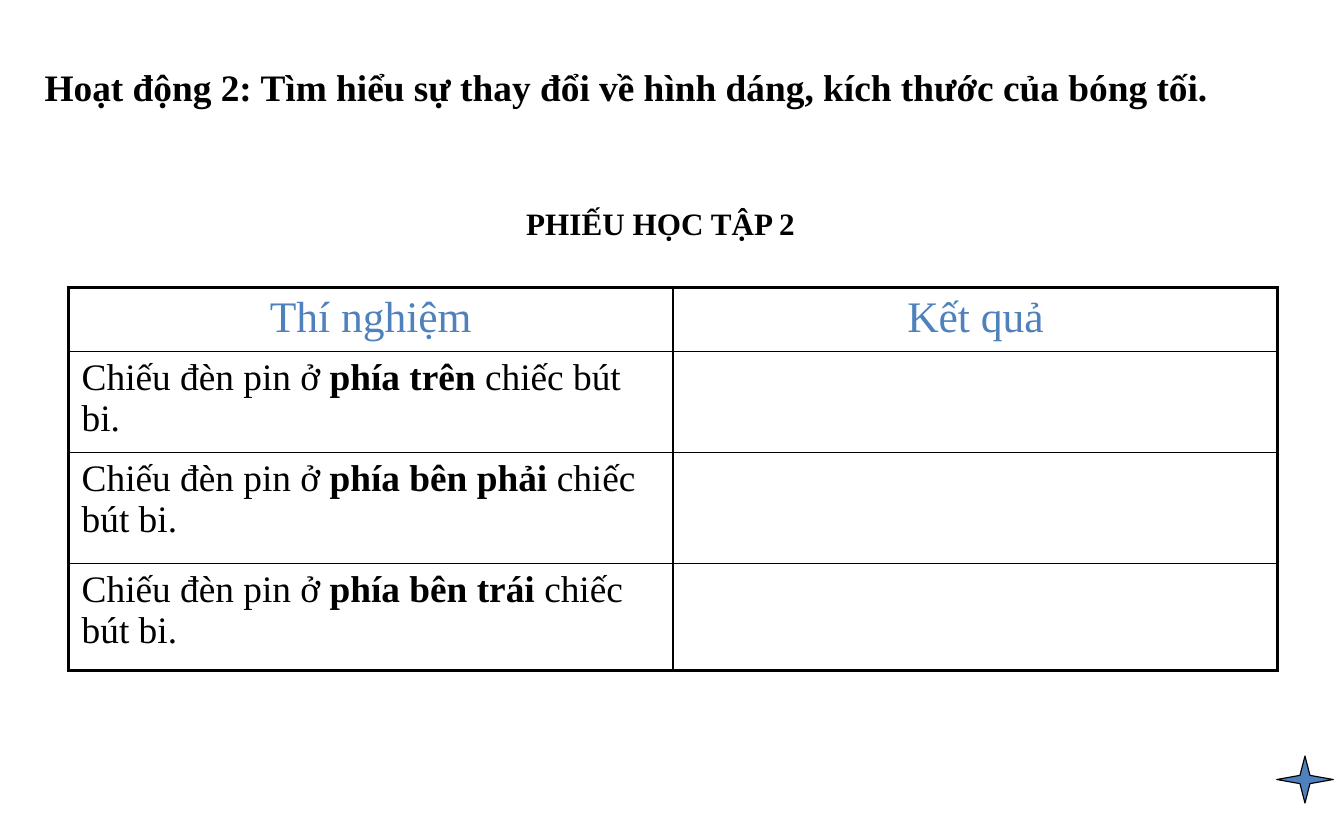
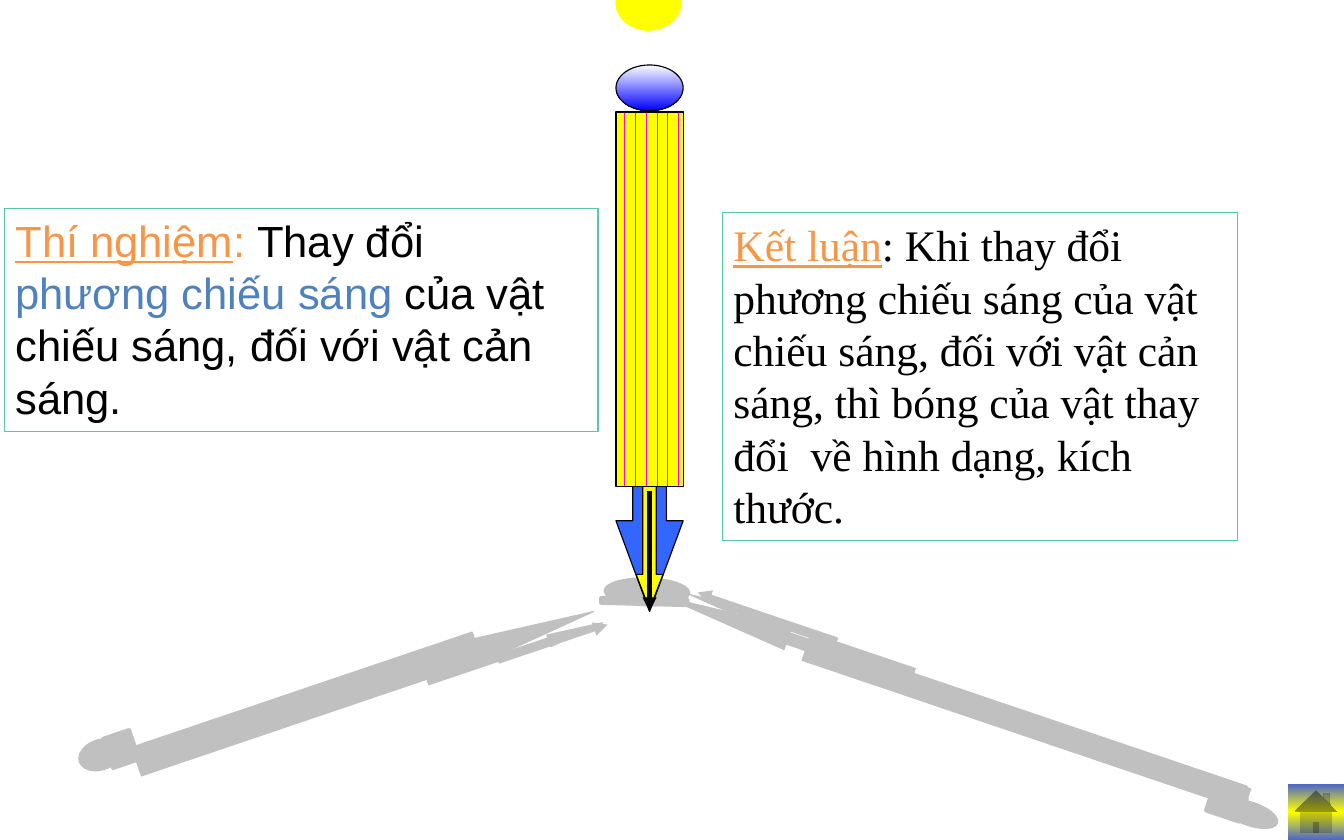
from copy import deepcopy
from dataclasses import dataclass
from math import cos, radians, sin

from lxml.etree import SubElement
from pptx import Presentation
from pptx.dml.color import RGBColor
from pptx.enum.dml import MSO_PATTERN
from pptx.enum.shapes import MSO_CONNECTOR, MSO_SHAPE
from pptx.enum.text import MSO_AUTO_SIZE, PP_ALIGN
from pptx.oxml.ns import qn
from pptx.util import Inches, Pt


@dataclass(frozen=True)
class Theme:
    columns: float = 12
    rows: float = 7.5
    serif: str = "Times New Roman"
    sans: str = "Arial"
    ink: str = "000000"
    accent: str = "4F81BD"
    label: str = "F79646"
    frame: str = "56C7AA"
    shade: str = "C0C0C0"
    sun: str = "FFFF00"
    stripe: str = "FF00FF"
    pen_tip: str = "3366FF"
    cap: tuple = ("FFFFFF", "0000FF")
    home: tuple = ("4E67C8", "FFFF00", "4E67C8")
    large: int = 28
    medium: int = 24
    small: int = 20
    thin: float = 0.75
    inner: float = 1
    outer: float = 2.25
    thick: float = 3


THEME = Theme()


@dataclass(frozen=True)
class Box:
    x: float
    y: float
    w: float
    h: float

    def within(self, x, y, w, h):
        return Box(self.x + x * self.w, self.y + y * self.h, w * self.w, h * self.h)

    def emu(self):
        return [Inches(side) for side in (self.x, self.y, self.w, self.h)]


def rgb(color):
    return RGBColor.from_string(color)


def paint_gradient(fill, element, colors):
    fill.gradient()
    fill.gradient_angle = 270
    stop_list = element.find(".//" + qn("a:gsLst"))
    for _ in colors[2:]:
        stop_list.append(deepcopy(stop_list[0]))
    for i, (stop, color) in enumerate(zip(fill.gradient_stops, colors)):
        stop.color.rgb = rgb(color)
        stop.position = i / (len(colors) - 1)


def set_line(line, color, width):
    line.color.rgb = rgb(color)
    line.width = Pt(width)


def draw(parent, kind, box, fill, line=None, width=THEME.thin, turn=0, adjust=()):
    shape = parent.shapes.add_shape(kind, *box.emu())
    shape.shadow.inherit = False
    shape.rotation = turn
    for i, value in enumerate(adjust):
        shape.adjustments[i] = value
    if isinstance(fill, tuple):
        paint_gradient(shape.fill, shape._element, fill)
    else:
        shape.fill.solid()
        shape.fill.fore_color.rgb = rgb(fill)
    if line:
        set_line(shape.line, line, width)
    else:
        shape.line.fill.background()
    return shape


def draw_arrow(parent, start, end, color):
    arrow = parent.shapes.add_connector(
        MSO_CONNECTOR.STRAIGHT, *(Inches(value) for value in (*start, *end)))
    set_line(arrow.line, color, THEME.thick)
    properties = arrow._element.spPr
    SubElement(properties.find(qn("a:ln")), qn("a:tailEnd"), type="triangle")
    SubElement(properties, qn("a:effectLst"))


def write(paragraph, runs, size, font, color=None, bold=None, align=PP_ALIGN.LEFT):
    paragraph.alignment = align
    paragraph.font.size = Pt(size)
    paragraph.font.name = font
    if color:
        paragraph.font.color.rgb = rgb(color)
    if bold is not None:
        paragraph.font.bold = bold
    for words, style in runs:
        run = paragraph.add_run()
        run.text = words
        if "color" in style:
            run.font.color.rgb = rgb(style["color"])
        if "bold" in style:
            run.font.bold = style["bold"]
        if "underline" in style:
            run.font.underline = style["underline"]


def add_text(slide, box, runs, size, font=THEME.serif, frame=None, **style):
    holder = slide.shapes.add_textbox(*box.emu())
    holder.text_frame.word_wrap = True
    holder.text_frame.auto_size = MSO_AUTO_SIZE.SHAPE_TO_FIT_TEXT
    if frame:
        set_line(holder.line, frame, THEME.thin)
    write(holder.text_frame.paragraphs[0], runs, size, font, **style)


def set_borders(cell, widths):
    properties = cell._tc.get_or_add_tcPr()
    for side, width in zip(("lnL", "lnR", "lnT", "lnB"), widths):
        border = SubElement(properties, qn(f"a:{side}"), w=str(int(Pt(width))))
        fill = SubElement(border, qn("a:solidFill"))
        SubElement(fill, qn("a:srgbClr"), val=THEME.ink)


def worksheet_table(slide, box, headings, experiments, row_shares):
    table = slide.shapes.add_table(len(row_shares), len(headings), *box.emu()).table
    table.first_row = table.horz_banding = False
    for row, share in zip(table.rows, row_shares):
        row.height = Inches(box.h * share)
    last_row, last_column = len(row_shares) - 1, len(headings) - 1
    for r in range(last_row + 1):
        for c in range(last_column + 1):
            cell = table.cell(r, c)
            edges = (c == 0, c == last_column, r == 0, r == last_row)
            set_borders(cell, [THEME.outer if edge else THEME.inner for edge in edges])
            cell.fill.background()
            cell.margin_left = cell.margin_right = Inches(0.12)
    for c, heading in enumerate(headings):
        write(table.cell(0, c).text_frame.paragraphs[0], [(heading, {})],
              THEME.large, THEME.serif, THEME.accent, align=PP_ALIGN.CENTER)
    for r, (start, place, end) in enumerate(experiments, 1):
        write(table.cell(r, 0).text_frame.paragraphs[0],
              [(start, {}), (place, {"bold": True}), (end, {})],
              THEME.medium, THEME.serif, THEME.ink)


def worksheet_slide(slide, page):
    add_text(slide, page.within(0.025, 0.07, 0.97, 0.067),
             [("Hoạt động 2: Tìm hiểu sự thay đổi về hình dáng, kích thước của bóng tối.", {})],
             THEME.medium, color=THEME.ink, bold=True)
    start = "Chiếu đèn pin ở "
    worksheet_table(slide, Box(0.61, 2.57, 10.8, 3.42), ("Thí nghiệm", "Kết quả"),
                    [(start, "phía trên ", "chiếc bút bi."),
                     (start, "phía bên phải", " chiếc bút bi."),
                     (start, "phía bên trái ", "chiếc bút bi.")],
                    (0.167, 0.263, 0.289, 0.281))
    draw(slide, MSO_SHAPE.STAR_4_POINT, page.within(0.95, 0.9, 0.042, 0.056),
         THEME.accent, THEME.ink, adjust=(0.125,))
    add_text(slide, page.within(0.35, 0.237, 0.283, 0.057), [("PHIẾU HỌC TẬP 2", {})],
             THEME.small, color=THEME.ink, bold=True, align=PP_ALIGN.CENTER)


def short_shadow(slide, box):
    group = slide.shapes.add_group_shape()
    draw(group, MSO_SHAPE.OVAL, box.within(0.03, 0, 0.97, 1), THEME.shade, THEME.shade, turn=1.5)
    draw(group, MSO_SHAPE.RECTANGLE, box.within(0, 0.76, 0.97, 0.16),
         THEME.shade, THEME.shade, THEME.thick, turn=1.5)


def pen(slide, box):
    group = slide.shapes.add_group_shape()
    draw(group, MSO_SHAPE.OVAL, box.within(0, 0, 1, 0.084), THEME.cap, THEME.ink)
    draw(group, MSO_SHAPE.DOWN_ARROW, box.within(0, 0.086, 1, 0.914),
         THEME.pen_tip, THEME.ink, adjust=(0.5, 1.35))
    draw(group, MSO_SHAPE.DOWN_ARROW, box.within(0.3, 0.643, 0.4, 0.353),
         THEME.sun, THEME.ink, adjust=(0.5, 1.3))
    barrel = draw(group, MSO_SHAPE.RECTANGLE, box.within(0, 0.086, 1, 0.686),
                  THEME.sun, THEME.ink)
    barrel.fill.patterned()
    barrel.fill.pattern = MSO_PATTERN.DARK_VERTICAL
    barrel.fill.fore_color.rgb = rgb(THEME.sun)
    barrel.fill.back_color.rgb = rgb(THEME.stripe)
    lead = box.within(0.5, 0.779, 0, 0.221)
    draw_arrow(group, (lead.x, lead.y), (lead.x, lead.y + lead.h), THEME.ink)


def long_shadow(slide, tip, side, length, widths, heads, centres, lead):
    group = slide.shapes.add_group_shape()
    turn = side * 108.7
    run, drop = sin(radians(108.7)), -cos(radians(108.7))

    def place(along, across):
        return (tip[0] + side * (along * run - across * drop),
                tip[1] + along * drop + across * run)

    def piece(kind, centre, share, width, line_width=THEME.thin, adjust=()):
        x, y = place(*centre)
        tall = length * share
        draw(group, kind, Box(x - width / 2, y - tall / 2, width, tall),
             THEME.shade, THEME.shade, line_width, turn % 360, adjust)

    wide, narrow = widths
    point, barrel, cap, eraser = centres
    piece(MSO_SHAPE.DOWN_ARROW, (length / 2, 0), 1, wide, adjust=(0.5, heads[0]))
    piece(MSO_SHAPE.DOWN_ARROW, point, 0.385, narrow, adjust=(0.5, heads[1]))
    piece(MSO_SHAPE.RECTANGLE, barrel, 0.75, wide)
    draw_arrow(group, place(*lead[0]), place(*lead[1]), THEME.shade)
    piece(MSO_SHAPE.OVAL, cap, 0.093, wide)
    piece(MSO_SHAPE.RECTANGLE, eraser, 0.056, wide, THEME.thick)


def conclusion_slide(slide, page):
    short_shadow(slide, Box(5.37, 5.16, 0.79, 0.25))
    pen(slide, Box(5.5, 0.58, 0.6, 4.88))
    long_shadow(slide, (5.94, 5.33), 1, 5.5, (0.21, 0.08), (5.5, 5.31),
                ((1.26, -0.09), (3.4, 0.04), (5.57, 0.16), (5.34, 0.15)),
                ((1.58, -0.13), (0.26, -0.13)))
    long_shadow(slide, (5.3, 5.46), -1, 4.28, (0.27, 0.11), (4.81, 4.61),
                ((0.78, 0.12), (2.69, -0.04), (4.58, -0.2), (4.39, -0.19)),
                ((0.95, 0.15), (-0.08, 0.15)))
    draw(slide, MSO_SHAPE.OVAL, Box(5.5, -0.22, 0.58, 0.49), THEME.sun, THEME.sun)
    label = {"color": THEME.label, "underline": True}
    plain = {"color": THEME.ink}
    add_text(slide, Box(0.04, 1.86, 5.3, 1.99),
             [("Thí nghiệm", label), (": ", {"color": THEME.label}), ("Thay đổi ", plain),
              ("phương chiếu sáng ", {"color": THEME.accent}),
              ("của vật chiếu sáng, đối với vật cản sáng.", plain)],
             THEME.large, THEME.sans, THEME.frame)
    draw(slide, MSO_SHAPE.ACTION_BUTTON_HOME, Box(page.w - 0.5, page.h - 0.5, 0.5, 0.5),
         THEME.home)
    add_text(slide, Box(6.45, 1.9, 4.6, 2.93),
             [("Kết luận", label),
              (": Khi thay đổi  phương chiếu sáng của vật chiếu sáng, đối với vật cản sáng, "
               "thì bóng của vật thay đổi  về hình dạng, kích thước.", plain)],
             THEME.large, frame=THEME.frame)


def main():
    deck = Presentation()
    deck.slide_width = Inches(THEME.columns)
    deck.slide_height = Inches(THEME.rows)
    page = Box(0, 0, THEME.columns, THEME.rows)
    for build in (worksheet_slide, conclusion_slide):
        build(deck.slides.add_slide(deck.slide_layouts[6]), page)
    deck.save("out.pptx")


if __name__ == "__main__":
    main()
